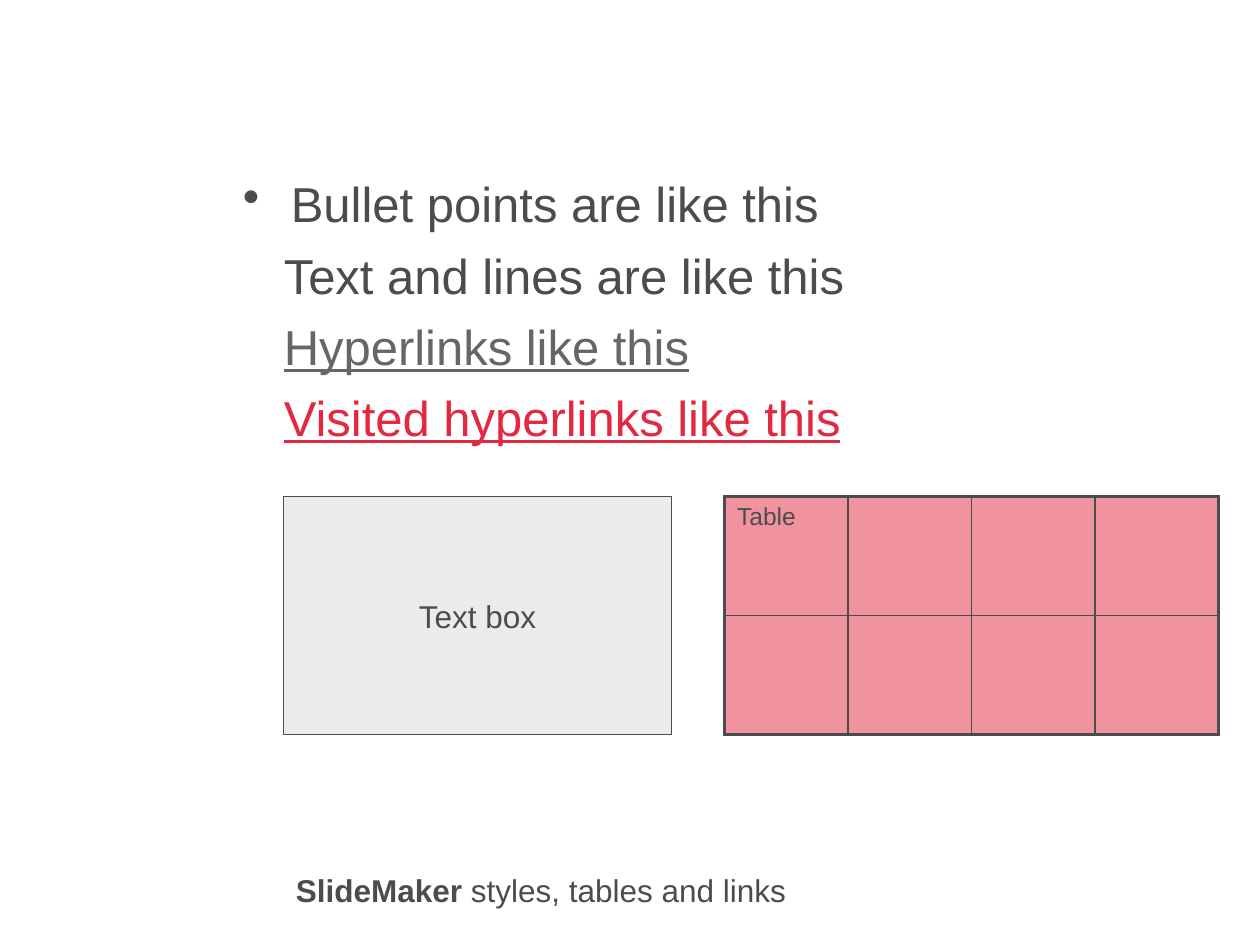
from dataclasses import dataclass

from lxml.etree import SubElement
from pptx import Presentation
from pptx.dml.color import RGBColor
from pptx.enum.shapes import MSO_SHAPE
from pptx.enum.text import MSO_ANCHOR, PP_ALIGN
from pptx.oxml import parse_xml
from pptx.oxml.ns import nsdecls, qn
from pptx.util import Inches, Pt

SLIDE_WIDTH, SLIDE_HEIGHT = Inches(10), Inches(7.5)
GRID_COLUMNS, GRID_ROWS = 100, 75


@dataclass(frozen=True)
class Theme:
    font: str = "Arial"
    text: str = "4C4C4C"
    link: str = "666666"
    accent: str = "E32941"
    panel: str = "CCCCCC"
    panel_alpha: int = 38
    cell_alpha: int = 50
    body_size: int = 28
    label_size: int = 18
    table_size: int = 14
    thin_line: float = 0.75
    inner_line: float = 1
    outer_line: float = 2.25


@dataclass(frozen=True)
class Area:
    """A rectangle in grid columns and rows."""
    column: float
    row: float
    columns: float
    rows: float

    def box(self) -> tuple:
        return (across(self.column), down(self.row),
                across(self.columns), down(self.rows))


@dataclass(frozen=True)
class BodyLine:
    text: str
    color: str
    bullet: bool = False
    underline: bool = False


THEME = Theme()
BODY_AREA = Area(18.3, 12.9, 54.2, 40.5)
TABLE_AREA = Area(57.5, 39.4, 39.2, 18.9)
PANEL_AREA = Area(22.5, 39.4, 30.8, 18.9)
CAPTION_AREA = Area(22.5, 68.3, 41.5, 4)
TABLE_ROWS, TABLE_COLUMNS = 2, 4
BULLET_INDENT, PLAIN_INDENT = 3.8, 3.24

BODY_LINES = [
    BodyLine("Bullet points are like this", THEME.text, bullet=True),
    BodyLine("Text and lines are like this", THEME.text),
    BodyLine("Hyperlinks like this", THEME.link, underline=True),
    BodyLine("Visited hyperlinks like this", THEME.accent, underline=True),
]


def across(columns: float) -> int:
    return round(SLIDE_WIDTH * columns / GRID_COLUMNS)


def down(rows: float) -> int:
    return round(SLIDE_HEIGHT * rows / GRID_ROWS)


def add_run(paragraph, text: str, size: float, color: str = THEME.text,
            bold: bool = False, underline: bool = False) -> None:
    run = paragraph.add_run()
    run.text = text
    font = run.font
    font.name, font.size = THEME.font, Pt(size)
    font.bold, font.underline = bold, underline
    font.color.rgb = RGBColor.from_string(color)


def set_fill(fill, color: str, alpha: int) -> None:
    fill.solid()
    fill.fore_color.rgb = RGBColor.from_string(color)
    color_element = fill._xPr.find(qn("a:solidFill"))[0]
    SubElement(color_element, qn("a:alpha"), val=str(alpha * 1000))


def set_borders(cell, row: int, column: int) -> None:
    """Give the table's outer edges the heavy line, all others the thin one."""
    outer_edges = {"lnL": column == 0, "lnR": column == TABLE_COLUMNS - 1,
                   "lnT": row == 0, "lnB": row == TABLE_ROWS - 1}
    properties = cell._tc.get_or_add_tcPr()
    for position, (edge, is_outer) in enumerate(outer_edges.items()):
        width = Pt(THEME.outer_line if is_outer else THEME.inner_line)
        properties.insert(position, parse_xml(
            f'<a:{edge} {nsdecls("a")} w="{width}"><a:solidFill>'
            f'<a:srgbClr val="{THEME.text}"/></a:solidFill></a:{edge}>'))


def add_body(slide, area: Area, lines: list[BodyLine]) -> None:
    frame = slide.shapes.add_textbox(*area.box()).text_frame
    frame.word_wrap = True
    frame.margin_top = down(0.9)
    for index, line in enumerate(lines):
        paragraph = frame.add_paragraph() if index else frame.paragraphs[0]
        properties = paragraph._p.get_or_add_pPr()
        indent = BULLET_INDENT if line.bullet else PLAIN_INDENT
        properties.set("marL", str(across(indent)))
        properties.set("indent", str(-across(indent) if line.bullet else 0))
        if line.bullet:
            SubElement(properties, qn("a:buChar"), char="•")
        else:
            SubElement(properties, qn("a:buNone"))
        if index:
            paragraph.space_before = Pt(7)
        add_run(paragraph, line.text, THEME.body_size, line.color,
                underline=line.underline)


def add_table(slide, area: Area, heading: str) -> None:
    table = slide.shapes.add_table(
        TABLE_ROWS, TABLE_COLUMNS, *area.box()).table
    table.first_row = table.horz_banding = False
    for row in range(TABLE_ROWS):
        for column in range(TABLE_COLUMNS):
            cell = table.cell(row, column)
            set_fill(cell.fill, THEME.accent, THEME.cell_alpha)
            set_borders(cell, row, column)
    add_run(table.cell(0, 0).text_frame.paragraphs[0], heading,
            THEME.table_size)


def add_panel(slide, area: Area, label: str) -> None:
    shape = slide.shapes.add_shape(MSO_SHAPE.RECTANGLE, *area.box())
    shape.shadow.inherit = False
    set_fill(shape.fill, THEME.panel, THEME.panel_alpha)
    shape.line.color.rgb = RGBColor.from_string(THEME.text)
    shape.line.width = Pt(THEME.thin_line)
    frame = shape.text_frame
    frame.word_wrap = False
    frame.vertical_anchor = MSO_ANCHOR.MIDDLE
    paragraph = frame.paragraphs[0]
    paragraph.alignment = PP_ALIGN.CENTER
    add_run(paragraph, label, THEME.label_size)


def add_caption(slide, area: Area, strong: str, rest: str) -> None:
    frame = slide.shapes.add_textbox(*area.box()).text_frame
    frame.word_wrap = False
    frame.margin_top = down(0.8)
    paragraph = frame.paragraphs[0]
    add_run(paragraph, strong, THEME.label_size, bold=True)
    add_run(paragraph, rest, THEME.label_size)


def main() -> None:
    presentation = Presentation()
    presentation.slide_width = SLIDE_WIDTH
    presentation.slide_height = SLIDE_HEIGHT
    slide = presentation.slides.add_slide(presentation.slide_layouts[6])

    # Text styles
    add_body(slide, BODY_AREA, BODY_LINES)

    # Table and text box side by side
    add_table(slide, TABLE_AREA, "Table")
    add_panel(slide, PANEL_AREA, "Text box")

    # Caption
    add_caption(slide, CAPTION_AREA, "SlideMaker", " styles, tables and links")

    presentation.save("out.pptx")


if __name__ == "__main__":
    main()
